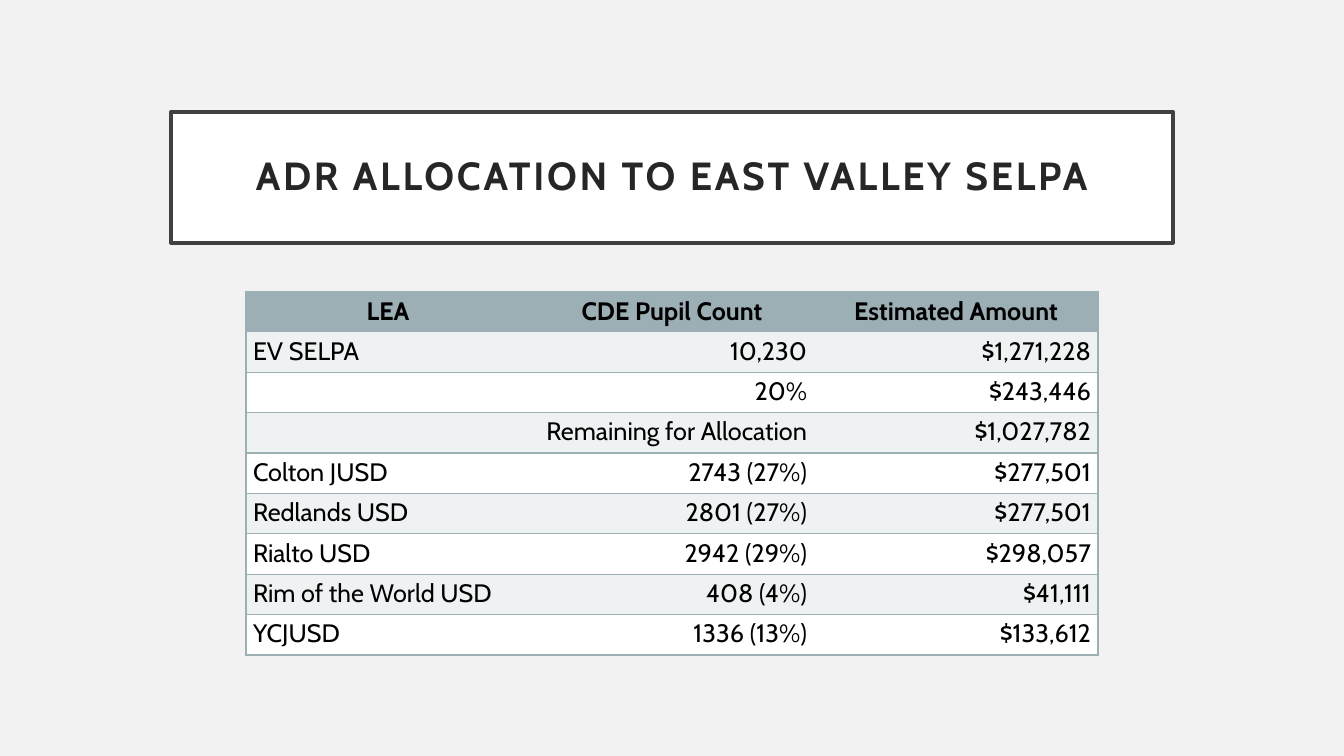
from dataclasses import dataclass

from lxml import etree
from pptx import Presentation
from pptx.dml.color import RGBColor
from pptx.enum.text import MSO_ANCHOR, MSO_AUTO_SIZE, PP_ALIGN
from pptx.oxml.ns import qn
from pptx.util import Inches, Pt

LEFT, CENTER, RIGHT = PP_ALIGN.LEFT, PP_ALIGN.CENTER, PP_ALIGN.RIGHT
TOP, MIDDLE = MSO_ANCHOR.TOP, MSO_ANCHOR.MIDDLE
NO_AUTOFIT = MSO_AUTO_SIZE.NONE
TITLE_ONLY = 5


@dataclass(frozen=True)
class Theme:
    font: str = "Cabin"
    title_size: int = 28
    table_size: int = 18
    background: str = "F2F2F2"
    white: str = "FFFFFF"
    frame: str = "404040"
    title_ink: str = "262626"
    table_ink: str = "000000"
    accent: str = "9BAFB5"
    band: str = "EFF2F3"


theme = Theme()


def style_font(font, size, color, bold):
    font.name, font.size, font.bold = theme.font, Pt(size), bold
    font.color.rgb = RGBColor.from_string(color)


def add_border(cell, side, color):
    """Draw one cell edge, or hide it when there is no color."""
    line = etree.SubElement(cell._tc.get_or_add_tcPr(), qn(f"a:ln{side}"), w=str(Pt(1)))
    if color:
        fill = etree.SubElement(line, qn("a:solidFill"))
        etree.SubElement(fill, qn("a:srgbClr"), val=color)
    else:
        etree.SubElement(line, qn("a:noFill"))


# Page
deck = Presentation()
deck.slide_width, deck.slide_height = Inches(13.33), Inches(7.5)
page = deck.slides.add_slide(deck.slide_layouts[TITLE_ONLY])
page.background.fill.solid()
page.background.fill.fore_color.rgb = RGBColor.from_string(theme.background)

# Framed title, centred across the page
title = page.shapes.title
title.width, title.height = Inches(9.94), Inches(1.3)
title.left, title.top = (deck.slide_width - title.width) // 2, Inches(1.11)
title.fill.solid()
title.fill.fore_color.rgb = RGBColor.from_string(theme.white)
title.line.color.rgb = RGBColor.from_string(theme.frame)
title.line.width = Pt(2.5)
frame = title.text_frame
frame.word_wrap, frame.auto_size, frame.vertical_anchor = True, NO_AUTOFIT, MIDDLE
frame.margin_left = frame.margin_right = Inches(0.2)
frame.margin_top = frame.margin_bottom = Inches(0.2)
frame.text = "ADR ALLOCATION TO EAST VALLEY SELPA"
para = frame.paragraphs[0]
para.alignment, para.line_spacing = CENTER, 0.9
style_font(para.font, theme.title_size, theme.title_ink, True)
para.runs[0]._r.get_or_add_rPr().set("spc", "200")

# Allocation table: a row with two entries joins its first two columns
rows = [
    ("LEA", "CDE Pupil Count", "Estimated Amount"),
    ("EV SELPA", "10,230", "$1,271,228"),
    ("20%", "$243,446"),
    ("Remaining for Allocation", "$1,027,782"),
    ("Colton JUSD", "2743 (27%)", "$277,501"),
    ("Redlands USD", "2801 (27%)", "$277,501"),
    ("Rialto USD", "2942 (29%)", "$298,057"),
    ("Rim of the World USD", "408 (4%)", "$41,111"),
    ("YCJUSD", "1336 (13%)", "$133,612"),
]
column_count = len(rows[0])
last = column_count - 1
table_width, table_height = Inches(8.45), Inches(3.61)
table = page.shapes.add_table(
    len(rows), column_count, (deck.slide_width - table_width) // 2, Inches(2.89),
    table_width, table_height).table
table.horz_banding = False

for r, entries in enumerate(rows):
    header, joined = r == 0, len(entries) < column_count
    fill = theme.accent if header else theme.band if r % 2 else theme.white

    # Fills and borders
    for c in range(column_count):
        cell = table.cell(r, c)
        add_border(cell, "L", theme.accent if c == 0 else None)
        add_border(cell, "R", theme.accent if c == last else None)
        add_border(cell, "T", theme.accent)
        add_border(cell, "B", theme.accent)
        cell.fill.solid()
        cell.fill.fore_color.rgb = RGBColor.from_string(fill)
    if joined:
        table.cell(r, 0).merge(table.cell(r, 1))

    # Text
    for c, text in zip((0, last) if joined else range(column_count), entries):
        cell = table.cell(r, c)
        cell.margin_left = cell.margin_right = Inches(0.07)
        cell.margin_top = cell.margin_bottom = Inches(0.04)
        cell.vertical_anchor = MIDDLE if header else TOP
        cell.text = text
        para = cell.text_frame.paragraphs[0]
        para.alignment = CENTER if header else LEFT if c == 0 and not joined else RIGHT
        style_font(para.font, theme.table_size, theme.table_ink, header)

deck.save("out.pptx")
